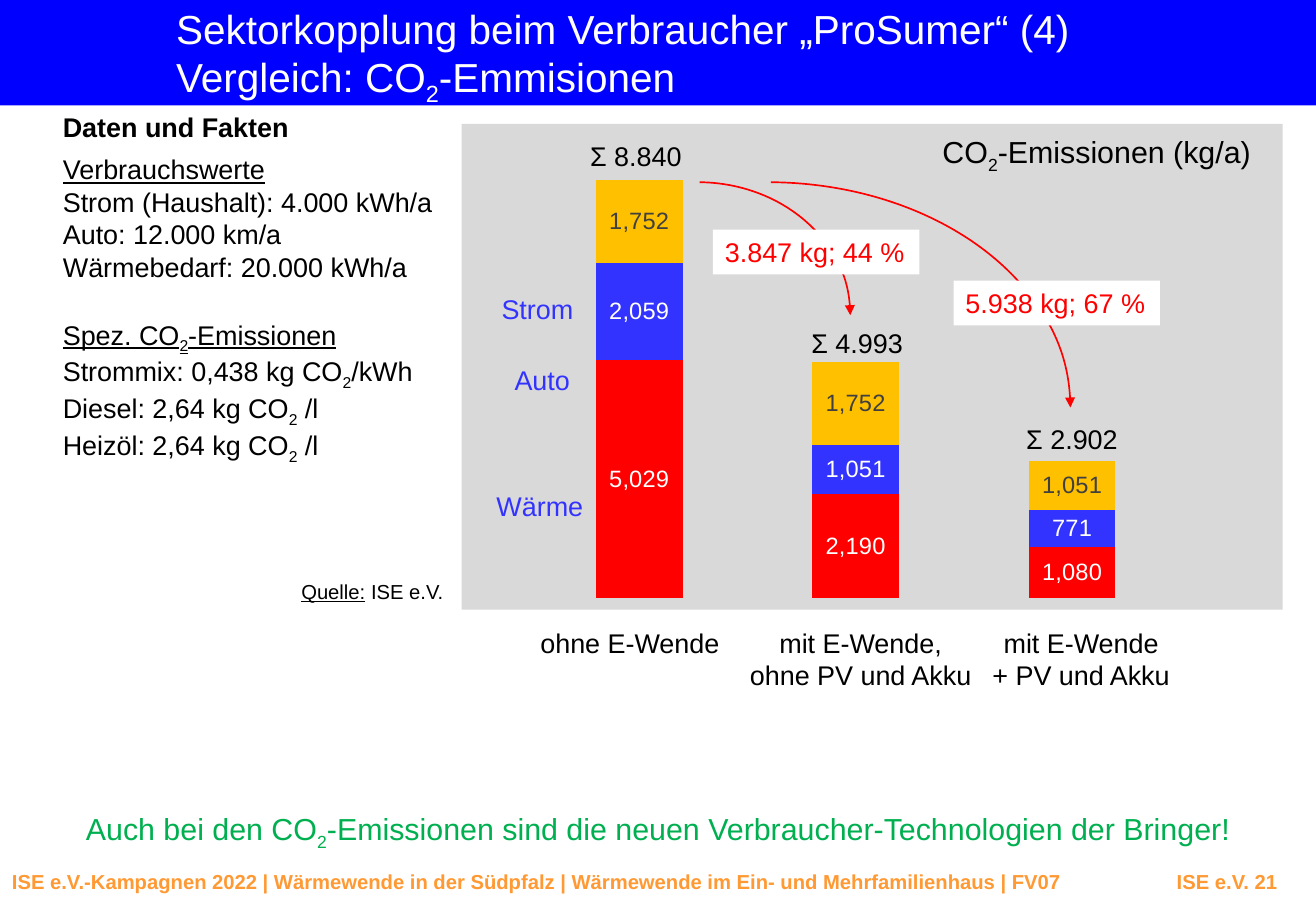
from lxml import etree
from pptx import Presentation
from pptx.chart.data import CategoryChartData
from pptx.dml.color import RGBColor
from pptx.enum.chart import XL_CHART_TYPE as ChartType
from pptx.enum.shapes import MSO_SHAPE as Shape
from pptx.enum.text import MSO_ANCHOR as Anchor, PP_ALIGN as Align
from pptx.oxml import parse_xml
from pptx.oxml.ns import nsdecls, qn
from pptx.util import Pt

BANNER = RGBColor(0x00, 0x00, 0xFF)
WHITE = RGBColor(0xFF, 0xFF, 0xFF)
BLACK = RGBColor(0x00, 0x00, 0x00)
PANEL = RGBColor(0xD9, 0xD9, 0xD9)
RED = RGBColor(0xFF, 0x00, 0x00)
BLUE = RGBColor(0x33, 0x33, 0xFF)
YELLOW = RGBColor(0xFF, 0xC0, 0x00)
DARK = RGBColor(0x40, 0x40, 0x40)
GREEN = RGBColor(0x00, 0xB0, 0x50)
ORANGE = RGBColor(0xFF, 0x99, 0x33)

deck = Presentation()
deck.slide_width, deck.slide_height = Pt(780), Pt(540)
page = deck.slides.add_slide(deck.slide_layouts[6])


def add_box(place, fill=None, shape=Shape.RECTANGLE):
    box = page.shapes.add_shape(shape, *[Pt(v) for v in place])
    box.shadow.inherit = False
    box.line.fill.background()
    if fill is None:
        box.fill.background()
    else:
        box.fill.solid()
        box.fill.fore_color.rgb = fill
    return box


def write(place, lines, size=16, color=BLACK, align=Align.LEFT, bold=False,
          heading=False, wrap=False, inset=(7.2, 3.6), fill=None):
    """One paragraph per line; text between underscores is subscript."""
    if fill is None:
        box = page.shapes.add_textbox(*[Pt(v) for v in place])
    else:
        box = add_box(place, fill)
    frame = box.text_frame
    frame.word_wrap = wrap
    frame.vertical_anchor = Anchor.TOP
    frame.margin_left = frame.margin_right = Pt(inset[0])
    frame.margin_top = frame.margin_bottom = Pt(inset[1])
    for i, line in enumerate(lines):
        para = frame.add_paragraph() if i else frame.paragraphs[0]
        para.alignment = align
        font = para.font
        font.name, font.size, font.bold = "Arial", Pt(size), bold
        font.color.rgb = color
        font.underline = heading and i == 0
        for k, part in enumerate(line.split("_")):
            span = para.add_run()
            span.text = part
            if k % 2:
                span._r.get_or_add_rPr().set("baseline", "-25000")
    return frame


# Banner and title
add_box((0, 0, 780, 62.6), BANNER)
write((104.4, 2.2, 542, 58.3),
      ["Sektorkopplung beim Verbraucher „ProSumer“ (4)",
       "Vergleich: CO_2_-Emmisionen"], 24, WHITE, inset=(0, 0))

# Footer with the page number at a right tab
footer = write((0, 512, 780, 21.6),
               ["ISE e.V.-Kampagnen 2022 | Wärmewende in der Südpfalz | "
                "Wärmewende im Ein- und Mehrfamilienhaus | FV07\tISE e.V. 21"],
               12, ORANGE, bold=True, wrap=True)
props = footer.paragraphs[0]._p.get_or_add_pPr()
props.insert(0, parse_xml(f'<a:tabLst {nsdecls("a")}>'
                          f'<a:tab pos="{Pt(750)}" algn="r"/></a:tabLst>'))

# Facts on the left
write((30.2, 61.9, 150, 26.6), ["Daten und Fakten"], bold=True)
write((30.2, 87.1, 237, 85),
      ["Verbrauchswerte", "Strom (Haushalt): 4.000 kWh/a",
       "Auto: 12.000 km/a", "Wärmebedarf: 20.000 kWh/a"], heading=True)
write((30.2, 185, 225.4, 85),
      ["Spez. CO_2_-Emissionen", "Strommix: 0,438 kg CO_2_/kWh",
       "Diesel: 2,64 kg CO_2_ /l", "Heizöl: 2,64 kg CO_2_ /l"], heading=True)
source = write((178.6, 343.4, 88.6, 14.4), ["Quelle:"], 12, inset=(0, 0))
source.paragraphs[0].runs[0].font.underline = True
source.paragraphs[0].add_run().text = " ISE e.V."

# Stacked columns on a grey panel
add_box((273.6, 73.4, 486.7, 288), PANEL)
data = CategoryChartData(number_format="#,##0")
data.categories = ["1", "2", "3"]
data.add_series("Wärme", (5029, 2190, 1080))
data.add_series("Auto", (2059, 1051, 771))
data.add_series("Strom", (1752, 1752, 1051))
chart = page.shapes.add_chart(ChartType.COLUMN_STACKED, Pt(298.1), Pt(59.8),
                              Pt(418.3), Pt(294.5), data).chart
chart.has_legend = chart.has_title = False
chart.font.name, chart.font.size = "Arial", Pt(10)
chart.font.color.rgb = BLACK
axis = chart.value_axis
axis.minimum_scale, axis.maximum_scale = 0, 10000
axis.has_major_gridlines = False
axis.visible = chart.category_axis.visible = False
plot = chart.plots[0]
plot.gap_width, plot.overlap, plot.vary_by_categories = 150, 100, False
for series, fill, ink in zip(plot.series, (RED, BLUE, YELLOW),
                             (WHITE, WHITE, DARK)):
    series.format.fill.solid()
    series.format.fill.fore_color.rgb = fill
    labels = series.data_labels
    labels.show_value = True
    labels.number_format, labels.number_format_is_linked = "#,##0", False
    labels.font.name, labels.font.size = "Arial", Pt(14)
    labels.font.color.rgb = ink

# Fixed plot area and clear chart background
area = chart._chartSpace.chart.plotArea
for old in area.findall(qn("c:layout")):
    area.remove(old)
values = (("layoutTarget", "inner"), ("xMode", "edge"), ("yMode", "edge"),
          ("x", 0.04), ("y", 0.05), ("w", 0.92), ("h", 0.95))
layout = etree.Element(qn("c:layout"))
manual = etree.SubElement(layout, qn("c:manualLayout"))
for tag, value in values:
    etree.SubElement(manual, qn(f"c:{tag}")).set("val", str(value))
area.insert(0, layout)
chart._chartSpace.chart.addnext(parse_xml(
    f'<c:spPr {nsdecls("c", "a")}><a:noFill/><a:ln><a:noFill/></a:ln></c:spPr>'))

# Chart heading, sector names, column names and sums
write((551.5, 75.6, 221.8, 28.8), ["CO_2_-Emissionen (kg/a)"], 18, wrap=True)
for left, top, width, name in ((285.8, 286.6, 67, "Wärme"),
                               (297.4, 211.7, 47.5, "Auto"),
                               (289.4, 169.9, 57.6, "Strom")):
    write((left, top, width, 26.6), [name], color=BLUE, align=Align.RIGHT)
for left, width, lines in (
        (312.5, 121.7, ["ohne E-Wende"]),
        (436.3, 147.6, ["mit E-Wende,", "ohne PV und Akku"]),
        (580.3, 121, ["mit E-Wende", "+ PV und Akku"])):
    write((left, 367.9, width, 46), lines, align=Align.CENTER)
for left, top, total in ((342.7, 79.2, "Σ 8.840"), (473.8, 190.1, "Σ 4.993"),
                         (601.2, 247, "Σ 2.902")):
    write((left, top, 69, 26.6), [total])

# Conclusion
write((0, 475.2, 780, 31.7),
      ["Auch bei den CO_2_-Emissionen sind die neuen "
       "Verbraucher-Technologien der Bringer!"],
      18, GREEN, Align.CENTER, wrap=True, inset=(5, 5))

# Savings: curved arrow with a label on it
for curve, label, saving in (
        ((323.3, 108, 180.7, 157.7), (422.6, 136.1), "3.847 kg; 44 %"),
        ((275.8, 108, 358.6, 267.1), (565.2, 166.3), "5.938 kg; 67 %")):
    arc = add_box(curve, shape=Shape.ARC)
    arc.adjustments[0], arc.adjustments[1] = 162.45, 0
    arc.line.color.rgb = RED
    arc.line.width = Pt(1)
    etree.SubElement(arc.line._get_or_add_ln(),
                     qn("a:tailEnd")).set("type", "triangle")
    write((*label, 122.4, 26.6), [saving], color=RED, fill=WHITE)

deck.save("out.pptx")
